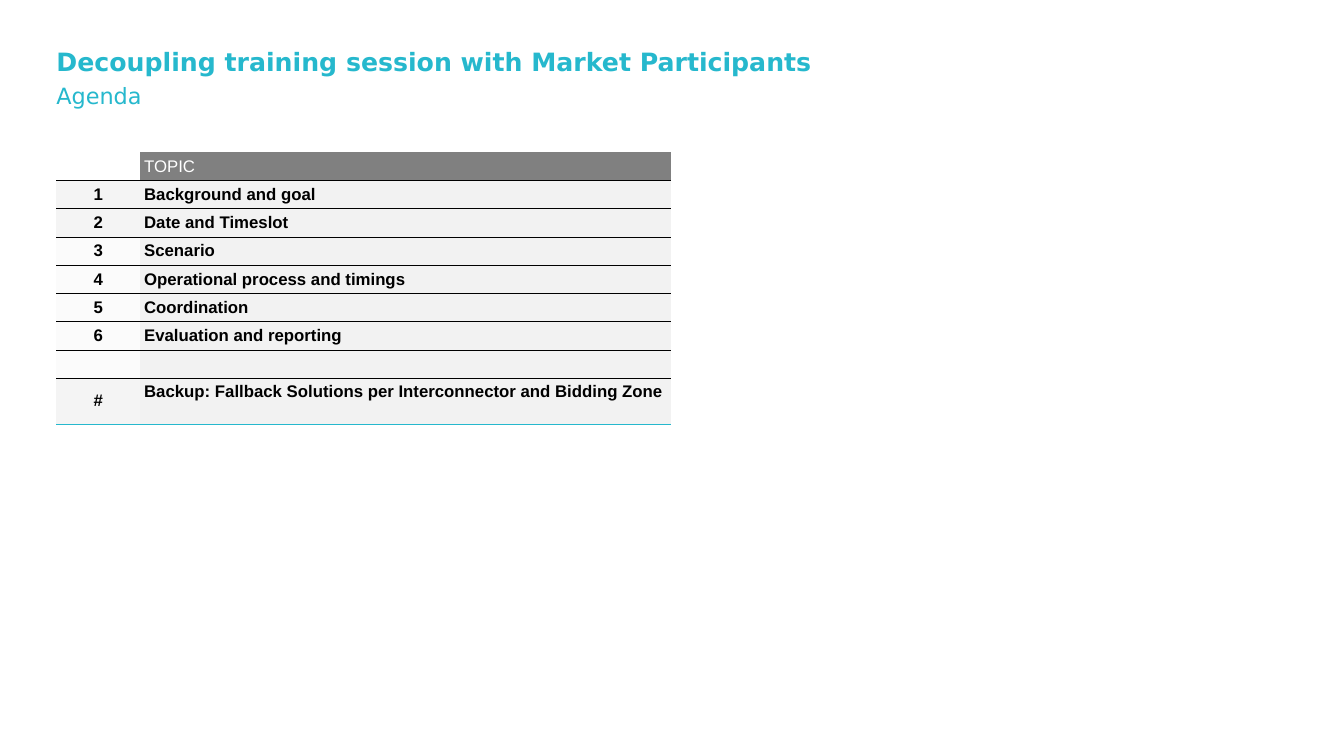
import pptx
import pptx.util
import pptx.dml.color
import pptx.enum.text
from dataclasses import dataclass
from lxml import etree

TITLE = "Decoupling training session with Market Participants"
SUBTITLE = "Agenda"
# number, topic, fill of the number cell
AGENDA = [
    ("", "TOPIC", "FFFFFF"),
    ("1", "Background and goal", "F4F4F4"),
    ("2", "Date and Timeslot", "F4F4F4"),
    ("3", "Scenario", "FBFBFB"),
    ("4", "Operational process and timings", "FBFBFB"),
    ("5", "Coordination", "FBFBFB"),
    ("6", "Evaluation and reporting", "FBFBFB"),
    ("", "", "FBFBFB"),
    ("#", "Backup: Fallback Solutions per Interconnector and Bidding Zone", "F4F4F4"),
]


@dataclass(frozen=True)
class Theme:
    accent: str = "26B8CD"
    header: str = "808080"
    topic: str = "F2F2F2"
    ink: str = "000000"
    white: str = "FFFFFF"
    heading_font: str = "DejaVu Sans"
    table_font: str = "Arial"
    title_size: int = 18
    subtitle_size: int = 16
    table_size: int = 12
    rule: float = 0.25


T = Theme()
WIDTH, HEIGHT = 13.33, 7.5
MARGIN = 0.56
TABLE_TOP = 1.51
COLUMNS = (0.83, 5.27)
ROW, LAST_ROW = 0.27, 0.46
CELL_INSET = 0.04
inch = pptx.util.Inches
Anchor = pptx.enum.text.MSO_ANCHOR
Align = pptx.enum.text.PP_ALIGN


def rgb(value):
    return pptx.dml.color.RGBColor.from_string(value)


def style(p, font, size, color, bold=False):
    p.font.name, p.font.size, p.font.bold = font, pptx.util.Pt(size), bold
    p.font.color.rgb = rgb(color)


def add_heading(s, top, height, text, size, bold=False):
    sp = s.shapes.add_textbox(inch(MARGIN), inch(top), inch(WIDTH - 2 * MARGIN), inch(height))
    tf = sp.text_frame
    tf.word_wrap = True
    tf.margin_left = tf.margin_right = tf.margin_top = tf.margin_bottom = 0
    p = tf.paragraphs[0]
    p.text = text
    style(p, T.heading_font, size, T.accent, bold)
    return p


def set_borders(cell, top, bottom):
    """Rule a cell above and below; None leaves a side without a line."""
    tcPr = cell._tc.get_or_add_tcPr()
    sides = (("lnL", None), ("lnR", None), ("lnT", top), ("lnB", bottom))
    for i, (side, color) in enumerate(sides):
        ln = etree.Element(pptx.oxml.ns.qn("a:" + side), w=str(pptx.util.Pt(T.rule)))
        if color:
            fill = etree.SubElement(ln, pptx.oxml.ns.qn("a:solidFill"))
            etree.SubElement(fill, pptx.oxml.ns.qn("a:srgbClr"), val=color)
        else:
            etree.SubElement(ln, pptx.oxml.ns.qn("a:noFill"))
        tcPr.insert(i, ln)


def fill_cell(cell, text, fill, color, bold, align):
    cell.margin_left = cell.margin_right = inch(CELL_INSET)
    cell.margin_top = cell.margin_bottom = inch(CELL_INSET)
    cell.vertical_anchor = Anchor.MIDDLE
    cell.fill.solid()
    cell.fill.fore_color.rgb = rgb(fill)
    p = cell.text_frame.paragraphs[0]
    p.alignment = align
    style(p, T.table_font, T.table_size, color, bold)
    if text:
        p.text = text
    else:  # keeps an empty row as low as the others
        etree.SubElement(p._p, pptx.oxml.ns.qn("a:endParaRPr"), sz=str(T.table_size * 100))


def add_agenda(s):
    last = len(AGENDA) - 1
    heights = [ROW] * last + [LAST_ROW]
    table = s.shapes.add_table(len(AGENDA), len(COLUMNS), inch(MARGIN), inch(TABLE_TOP),
                               inch(sum(COLUMNS)), inch(sum(heights))).table
    table.first_row = table.horz_banding = False
    for column, width in zip(table.columns, COLUMNS):
        column.width = inch(width)
    for i, (number, topic, number_fill) in enumerate(AGENDA):
        table.rows[i].height = inch(heights[i])
        header = i == 0
        color = T.white if header else T.ink
        topic_fill = T.header if header else T.topic
        fill_cell(table.cell(i, 0), number, number_fill, color, not header, Align.CENTER)
        fill_cell(table.cell(i, 1), topic, topic_fill, color, not header, Align.LEFT)
        for cell in table.rows[i].cells:
            set_borders(cell, None if header else T.ink, T.accent if i == last else T.ink)
    table.cell(last, 1).vertical_anchor = Anchor.TOP


def main():
    prs = pptx.Presentation()
    prs.slide_width, prs.slide_height = inch(WIDTH), inch(HEIGHT)
    s = prs.slides.add_slide(prs.slide_layouts[6])
    add_heading(s, 0.49, 0.57, TITLE, T.title_size, bold=True).line_spacing = 0.9
    add_heading(s, 0.81, 0.25, SUBTITLE, T.subtitle_size)
    add_agenda(s)
    prs.save("out.pptx")


if __name__ == "__main__":
    main()
